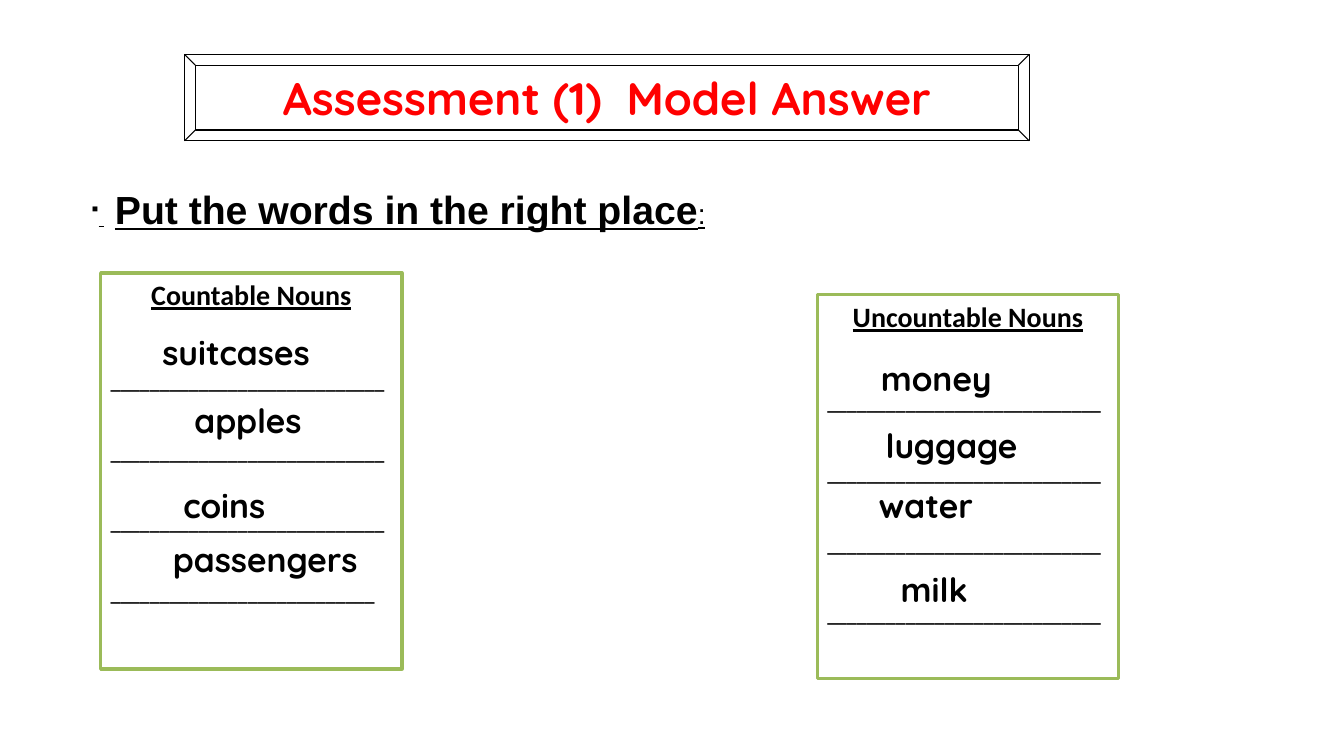
from dataclasses import dataclass

import pptx
import pptx.dml.color
import pptx.enum.shapes
import pptx.enum.text
import pptx.oxml
import pptx.util
from pptx.oxml.ns import nsdecls

Cm = pptx.util.Cm
Pt = pptx.util.Pt
Kind = pptx.enum.shapes.MSO_SHAPE
Align = pptx.enum.text.PP_ALIGN
Anchor = pptx.enum.text.MSO_ANCHOR
Fit = pptx.enum.text.MSO_AUTO_SIZE


@dataclass(frozen=True)
class Box:
    left: float
    top: float
    width: float
    height: float

    def place(self) -> tuple:
        return Cm(self.left), Cm(self.top), Cm(self.width), Cm(self.height)


@dataclass(frozen=True)
class Run:
    text: str
    size: float
    font: str
    bold: bool = False
    under: bool = False
    color: str = "000000"
    track: float = 0


@dataclass(frozen=True)
class Card:
    box: Box
    title: str
    blanks: int


@dataclass(frozen=True)
class Word:
    text: str
    box: Box


CARDS = [
    Card(Box(2.54, 6.88, 7.59, 9.98), "Countable Nouns", 111),
    Card(Box(20.6, 7.42, 7.59, 9.68), "Uncountable Nouns", 112),
]
WORDS = [
    Word("money", Box(21.95, 8.89, 3.38, 1.27)),
    Word("suitcases", Box(3.84, 8.23, 4.37, 1.27)),
    Word("luggage", Box(22.07, 10.57, 4.14, 1.27)),
    Word("apples", Box(4.65, 9.96, 4.37, 1.27)),
    Word("water", Box(21.89, 12.09, 3.07, 1.27)),
    Word("coins", Box(4.37, 12.09, 2.9, 1.27)),
    Word("milk", Box(22.45, 14.2, 2.9, 1.27)),
    Word("passengers", Box(4.11, 13.46, 5.69, 1.27)),
]


def rgb(color: str) -> pptx.dml.color.RGBColor:
    return pptx.dml.color.RGBColor.from_string(color)


def write(para, runs: list[Run]) -> None:
    for item in runs:
        run = para.add_run()
        run.text = item.text
        font = run.font
        font.size = Pt(item.size)
        font.name = item.font
        font.bold = item.bold
        font.underline = item.under
        font.color.rgb = rgb(item.color)
        if item.track:
            font._element.set("spc", str(round(item.track * 100)))


def frame(slide, kind, box: Box, line: str, weight: float, fill: str = ""):
    shape = slide.shapes.add_shape(kind, *box.place())
    shape.shadow.inherit = False
    if fill:
        shape.fill.solid()
        shape.fill.fore_color.rgb = rgb(fill)
    else:
        shape.fill.background()
    shape.line.color.rgb = rgb(line)
    shape.line.width = Pt(weight)
    shape.text_frame.word_wrap = True
    return shape.text_frame


def label(slide, box: Box, runs: list[Run], wrap: bool = True):
    text = slide.shapes.add_textbox(*box.place()).text_frame
    text.word_wrap = wrap
    text.auto_size = Fit.SHAPE_TO_FIT_TEXT
    para = text.paragraphs[0]
    write(para, runs)
    return para


def bullet(para, mark: str) -> None:
    props = para._p.get_or_add_pPr()
    for tag in ('a:buFont typeface="Arial"', f'a:buChar char="{mark}"'):
        props.append(pptx.oxml.parse_xml(f"<{tag} {nsdecls('a')}/>"))


def banner(slide) -> None:
    text = frame(slide, Kind.BEVEL, Box(4.65, 1.37, 21.29, 2.18), "000000", 0.75)
    text.auto_size = Fit.SHAPE_TO_FIT_TEXT
    text.vertical_anchor = Anchor.MIDDLE
    para = text.paragraphs[0]
    para.alignment = Align.CENTER
    parts = [("Assessment (1)", 0), (" ", 8.5), ("Model Answer", 0)]
    write(para, [Run(part, 32.5, "Quicksand", True, color="FF0000", track=gap)
                 for part, gap in parts])


def panel(slide, card: Card) -> None:
    text = frame(slide, Kind.RECTANGLE, card.box, "9BBB59", 2.5, "FFFFFF")
    text.vertical_anchor = Anchor.TOP
    head = text.paragraphs[0]
    head.alignment = Align.CENTER
    write(head, [Run(card.title, 20, "Calibri", True, True)])
    rules = text.add_paragraph()
    rules.alignment = Align.LEFT
    rules.line_spacing = 3.0
    write(rules, [Run("_" * card.blanks, 14, "Calibri", True)])
    for para in (head, rules):
        para.space_after = Pt(8)


def main() -> None:
    deck = pptx.Presentation()
    deck.slide_width = Cm(33.87)
    deck.slide_height = Cm(19.05)
    slide = deck.slides.add_slide(deck.slide_layouts[6])
    banner(slide)
    task = label(slide, Box(2.06, 4.55, 16.21, 1.45), [
        Run(" ", 14, "Arial", under=True, track=7.8),
        Run("Put the words in the right place", 28, "Arial", True, True),
        Run(":", 20, "Arial", under=True),
    ], wrap=False)
    bullet(task, "▪")
    for card in CARDS:
        panel(slide, card)
    for word in WORDS:
        label(slide, word.box, [Run(word.text, 24, "Quicksand", True)])
    deck.save("out.pptx")


if __name__ == "__main__":
    main()
